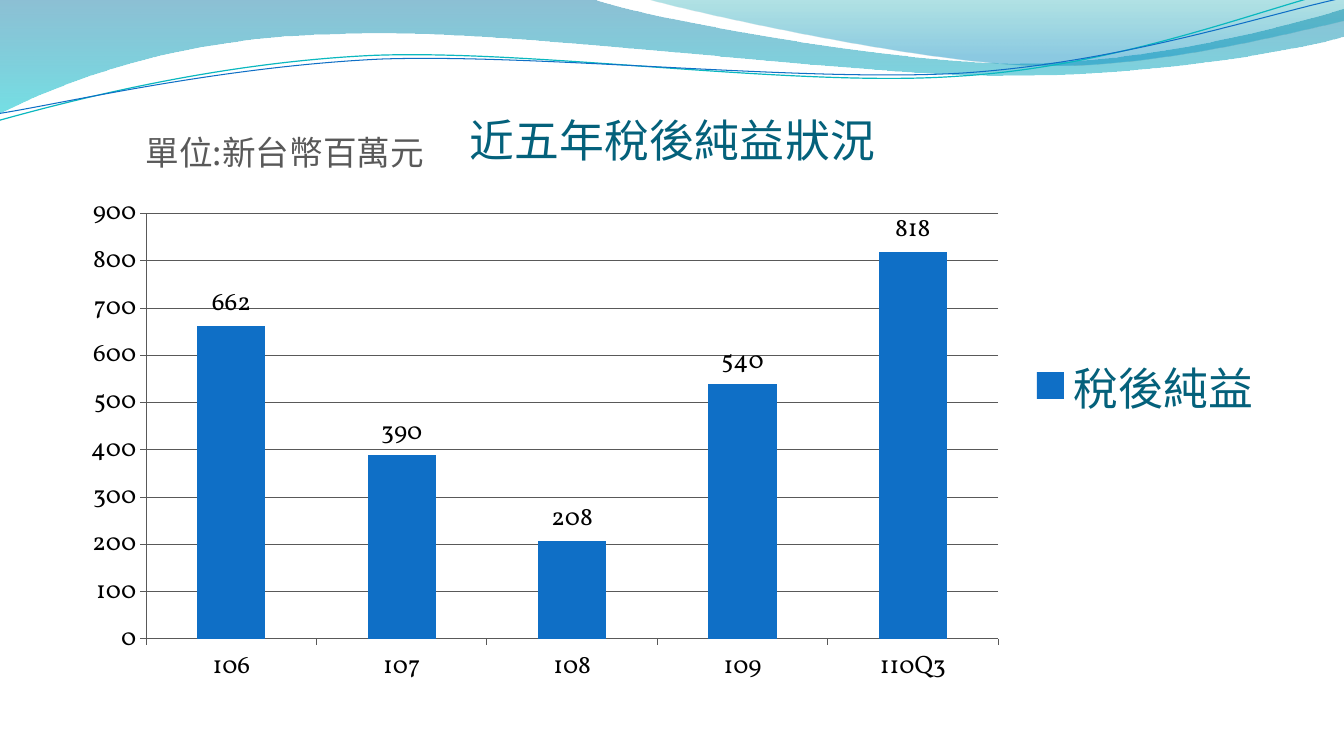
from math import cos, radians, sin

from lxml import etree
from pptx import Presentation
from pptx.chart.data import CategoryChartData
from pptx.dml.color import RGBColor
from pptx.enum.chart import XL_CHART_TYPE, XL_LABEL_POSITION, XL_LEGEND_POSITION, XL_TICK_MARK
from pptx.enum.text import PP_ALIGN
from pptx.oxml import parse_xml
from pptx.oxml.ns import nsdecls, qn
from pptx.util import Pt

PX = 9144
COLUMN = XL_CHART_TYPE.COLUMN_CLUSTERED
OUT_END = XL_LABEL_POSITION.OUTSIDE_END
RIGHT = XL_LEGEND_POSITION.RIGHT
OUTSIDE = XL_TICK_MARK.OUTSIDE
CENTER = PP_ALIGN.CENTER
LATIN, CJK = "Vollkorn", "Noto Sans CJK SC"
BLUE, TEAL, GRAY = "0F6FC6", "04617B", "595959"
TILT = 2.7

BANDS = [
    ([(0, 0), (587, -1),
      (634, 17, 885, 63, 1011, 63), (1138, 63, 1278, 26, 1333, 9),
      (1335, 36),
      (1311, 44, 1160, 76, 994, 75), (829, 75, 509, 28, 343, 34),
      (172, 36, 61, 83, -1, 113), (0, 0)],
     [(0, "0074A1", 45), (1, "00C6CF", 55)]),
    ([(639, -1),
      (679, 11, 909, 62, 1025, 65), (1141, 69, 1282, 32, 1333, 21),
      (1333, 0), (639, -1)],
     [(0, "00A1A9", 30), (0.8, "008BBF", 45)]),
]
WAVES = [
    ([(-1, 119), (64, 101, 211, 62, 369, 55), (527, 48, 790, 87, 950, 76),
      (1110, 66, 1252, 8, 1331, -10)], (665, 57), "0AB8BF", 0.85),
    ([(0, 112), (63, 103, 218, 66, 378, 59), (537, 53, 796, 82, 955, 72),
      (1115, 62, 1255, 14, 1334, -2)], (667, 59), BLUE, 0.75),
]
PROFITS = {"106": 662, "107": 390, "108": 208, "109": 540, "110Q3": 818}


def px(*nums):
    return [n * PX for n in nums]


def color(code):
    return RGBColor.from_string(code)


def style(font, code, **form):
    for key, val in form.items():
        setattr(font, key, val)
    font.color.rgb = color(code)
    props = font._element
    east = props.find(qn("a:ea"))
    if east is None:
        east = etree.Element(qn("a:ea"))
        props.find(qn("a:latin")).addnext(east)
    east.set("typeface", form["name"])


def turn(route, mid):
    c, s = cos(radians(TILT)), sin(radians(TILT))
    for item in route:
        pairs = [(x - mid[0], y - mid[1]) for x, y in zip(item[::2], item[1::2])]
        yield tuple(n for x, y in pairs
                    for n in (mid[0] + x * c - y * s, mid[1] + x * s + y * c))


def trace(slide, route, close):
    points = [pair for item in route for pair in zip(item[::2], item[1::2])]
    form = slide.shapes.build_freeform(*points[0], scale=PX)
    form.add_line_segments([(round(x, 2), round(y, 2)) for x, y in points[1:]], close=close)
    shape = form.convert_to_shape()
    shape.shadow.inherit = False
    lines = iter(list(shape._element.spPr.iter(qn("a:lnTo"))))
    for item in route[1:]:
        first = next(lines)
        if len(item) == 6:
            first.tag = qn("a:cubicBezTo")
            for _ in range(2):
                line = next(lines)
                first.append(line[0])
                line.getparent().remove(line)
    return shape


def band(slide, route, stops):
    shape = trace(slide, route, True)
    shape.line.fill.background()
    shape.fill.gradient()
    shape.fill.gradient_angle = 270
    for stop, (spot, code, _) in zip(shape.fill.gradient_stops, stops):
        stop.position = spot
        stop.color.rgb = color(code)
    tints = shape._element.spPr.iter(qn("a:srgbClr"))
    for tint, (_, _, alpha) in zip(tints, stops):
        etree.SubElement(tint, qn("a:alpha")).set("val", str(alpha * 1000))


def wave(slide, route, mid, code, width):
    shape = trace(slide, list(turn(route, mid)), False)
    shape.rotation = 360 - TILT
    shape.fill.background()
    shape.line.color.rgb = color(code)
    shape.line.width = Pt(width)


def label(slide, box, text):
    frame = slide.shapes.add_textbox(*px(*box)).text_frame
    frame.word_wrap = True
    para = frame.paragraphs[0]
    para.alignment = CENTER
    run = para.add_run()
    run.text = text
    style(run.font, GRAY, name=CJK, size=Pt(24))


def place(area, box, inner):
    left, top, wide, high = box
    x, y, w, h = inner
    spots = {"layoutTarget": "inner", "xMode": "edge", "yMode": "edge",
             "x": (x - left) / wide, "y": (y - top) / high,
             "w": w / wide, "h": h / high}
    old = area.find(qn("c:layout"))
    if old is not None:
        area.remove(old)
    marks = "".join(f'<c:{key} val="{val}"/>' for key, val in spots.items())
    area.insert(0, parse_xml(
        f'<c:layout {nsdecls("c")}><c:manualLayout>{marks}</c:manualLayout></c:layout>'))


def axis(item, **form):
    for key, val in form.items():
        setattr(item, key, val)
    rule(item.format.line)


def rule(line):
    line.color.rgb = color(GRAY)
    line.width = Pt(0.75)


def graph(slide, box, inner, name, title):
    data = CategoryChartData()
    data.categories = list(PROFITS)
    data.add_series(name, list(PROFITS.values()))
    chart = slide.shapes.add_chart(COLUMN, *px(*box), data).chart
    style(chart.font, "000000", name=LATIN, size=Pt(18))

    chart.has_title = True
    run = chart.chart_title.text_frame.paragraphs[0].add_run()
    run.text = title
    chart.has_legend = True
    chart.legend.position = RIGHT
    chart.legend.include_in_layout = False
    for font in (run.font, chart.legend.font):
        style(font, TEAL, name=CJK, size=Pt(32), bold=False)

    axis(chart.category_axis, major_tick_mark=OUTSIDE)
    axis(chart.value_axis, major_tick_mark=OUTSIDE, has_major_gridlines=True)
    rule(chart.value_axis.major_gridlines.format.line)

    plot = chart.plots[0]
    plot.gap_width = 150
    plot.vary_by_categories = False
    bars = plot.series[0]
    bars.format.fill.solid()
    bars.format.fill.fore_color.rgb = color(BLUE)
    for i in range(len(PROFITS)):
        bars.points[i].data_label.position = OUT_END
    place(chart._chartSpace.chart.plotArea, box, inner)


def main():
    deck = Presentation()
    deck.slide_width, deck.slide_height = px(1333, 750)
    slide = deck.slides.add_slide(deck.slide_layouts[6])
    for item in BANDS:
        band(slide, *item)
    for item in WAVES:
        wave(slide, *item)
    graph(slide, (67, 73, 1200, 619), (145, 212, 845, 422),
          "稅後純益", "近五年稅後純益狀況")
    label(slide, (122, 126, 321, 48), "單位:新台幣百萬元")
    deck.save("out.pptx")


if __name__ == "__main__":
    main()
